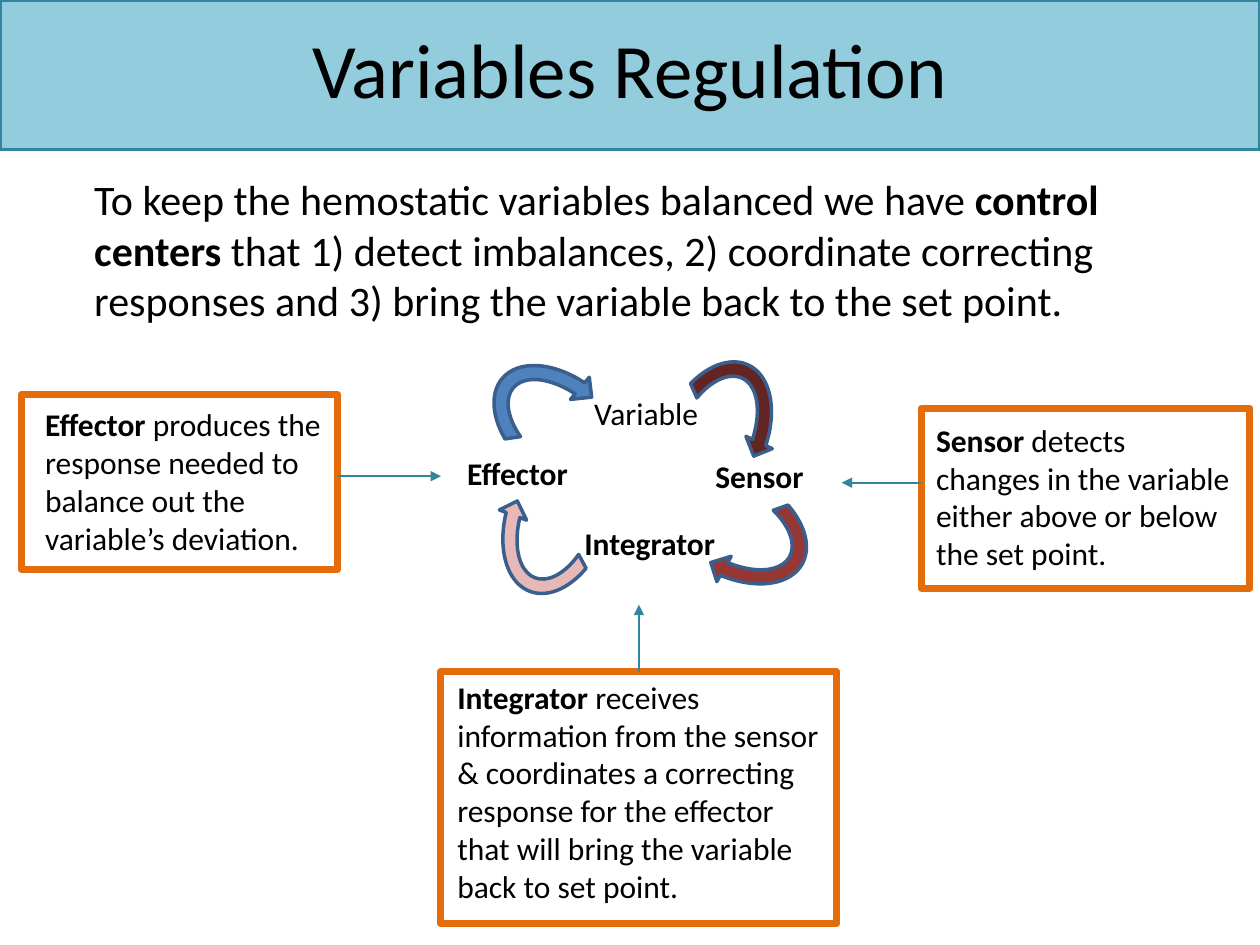
from lxml import etree
from pptx import Presentation
from pptx import util as u
from pptx.dml.color import RGBColor
from pptx.enum import shapes, text
from pptx.oxml.ns import qn

COLOURS = {
    "black": "000000", "white": "FFFFFF", "banner": "93CDDD", "teal": "31859C",
    "orange": "E46C0A", "outline": "3A5F8C", "maroon": "632523",
    "red": "953735", "pink": "E6B9B8", "blue": "4F81BD",
}

# label, left, top, width, bold
LABELS = [
    ("Variable", 11.73, 7.82, 3.07, False),
    ("Sensor", 14.17, 9.09, 2.34, True),
    ("Integrator", 11.53, 10.44, 3.4, True),
    ("Effector", 9.17, 9.02, 2.82, True),
]

# left, top, rotation, fill
CYCLE_ARROWS = [
    (13.23, 7.06, 25.1, "maroon"),
    (10.08, 8.64, 200.5, "pink"),
    (13.59, 8.81, 119.5, "red"),
    (10.19, 6.91, 310.4, "blue"),
]
ARROW_BEND = (0.125, 11.423, 204.577, 132.77, 0.125)

# frame, text area, arrow start and end, term, explanation
CALLOUTS = [
    ((8.89, 13.54, 7.98, 5.08), (8.97, 13.54, 7.92, 4.88),
     (12.88, 13.54, 12.88, 12.19), "Integrator",
     " receives information from the sensor & coordinates a correcting "
     "response for the effector that will bring the variable back to set point."),
    ((0.43, 7.95, 6.38, 3.53), (0.66, 8.05, 6.53, 3.33),
     (6.81, 9.6, 8.89, 9.6), "Effector",
     " produces the response needed to balance out the variable’s deviation."),
    ((18.57, 8.23, 6.63, 3.63), (18.62, 8.36, 6.53, 3.33),
     (18.57, 9.73, 16.97, 9.73), "Sensor",
     " detects changes in the variable either above or below the set point."),
]


def colour(name):
    return RGBColor.from_string(COLOURS[name])


def lengths(values):
    return [u.Cm(value) for value in values]


def apply_format(target, values):
    for name, value in values.items():
        setattr(target, name, value)


def add_shape(page, kind, area, fill, line, width):
    shape = page.shapes.add_shape(kind, *lengths(area))
    shape.shadow.inherit = False
    shape.fill.solid()
    shape.fill.fore_color.rgb = colour(fill)
    shape.line.color.rgb = colour(line)
    shape.line.width = u.Pt(width)
    return shape


def add_text(page, area, spans, size, align=text.PP_ALIGN.LEFT,
             anchor=text.MSO_ANCHOR.TOP):
    """Write one paragraph from (wording, bold) spans."""
    box = page.shapes.add_textbox(*lengths(area))
    apply_format(box.text_frame, {"word_wrap": True, "vertical_anchor": anchor})
    para = box.text_frame.paragraphs[0]
    para.alignment = align
    for wording, bold in spans:
        span = para.add_run()
        span.text = wording
        apply_format(span.font, {"name": "Calibri", "size": u.Pt(size), "bold": bold})
        span.font.color.rgb = colour("black")


def add_arrow(page, ends):
    arrow = page.shapes.add_connector(shapes.MSO_CONNECTOR.STRAIGHT, *lengths(ends))
    arrow.line.color.rgb = colour("teal")
    arrow.line.width = u.Pt(1.25)
    etree.SubElement(arrow.line._get_or_add_ln(), qn("a:tailEnd"), type="triangle")
    etree.SubElement(arrow._element.spPr, qn("a:effectLst"))
    return arrow


def add_cycle(page):
    for wording, left, top, width, bold in LABELS:
        add_text(page, (left, top, width, 1.02), [(wording, bold)], 18)
    for left, top, rotation, fill in CYCLE_ARROWS:
        arrow = add_shape(page, shapes.MSO_SHAPE.CIRCULAR_ARROW,
                          (left, top, 2.34, 3.53), fill, "outline", 2)
        arrow.rotation = rotation
        for index, value in enumerate(ARROW_BEND):
            arrow.adjustments[index] = value


def add_callout(page, frame_area, text_area, ends, term, explanation):
    frame = add_shape(page, shapes.MSO_SHAPE.RECTANGLE, frame_area,
                      "white", "orange", 4)
    arrow = add_arrow(page, ends)
    if term == "Integrator":
        arrow.begin_connect(frame, 0)
    add_text(page, text_area, [(term, True), (explanation, False)], 18)


def main():
    deck = Presentation()
    deck.slide_width, deck.slide_height = lengths((25.4, 19.05))
    page = deck.slides.add_slide(deck.slide_layouts[6])

    add_shape(page, shapes.MSO_SHAPE.RECTANGLE, (0, 0, 25.4, 3.02),
              "banner", "teal", 2)
    add_text(page, (1.27, 0, 22.86, 2.74), [("Variables Regulation", False)], 44,
             text.PP_ALIGN.CENTER, text.MSO_ANCHOR.MIDDLE)
    add_text(page, (1.65, 3.38, 22.68, 3.33), [
        ("To keep the hemostatic variables balanced we have ", False),
        ("control centers", True),
        (" that 1) detect imbalances, 2) coordinate correcting responses "
         "and 3) bring the variable back to the set point.", False),
    ], 24)
    add_cycle(page)
    for callout in CALLOUTS:
        add_callout(page, *callout)

    deck.save("out.pptx")


if __name__ == "__main__":
    main()
